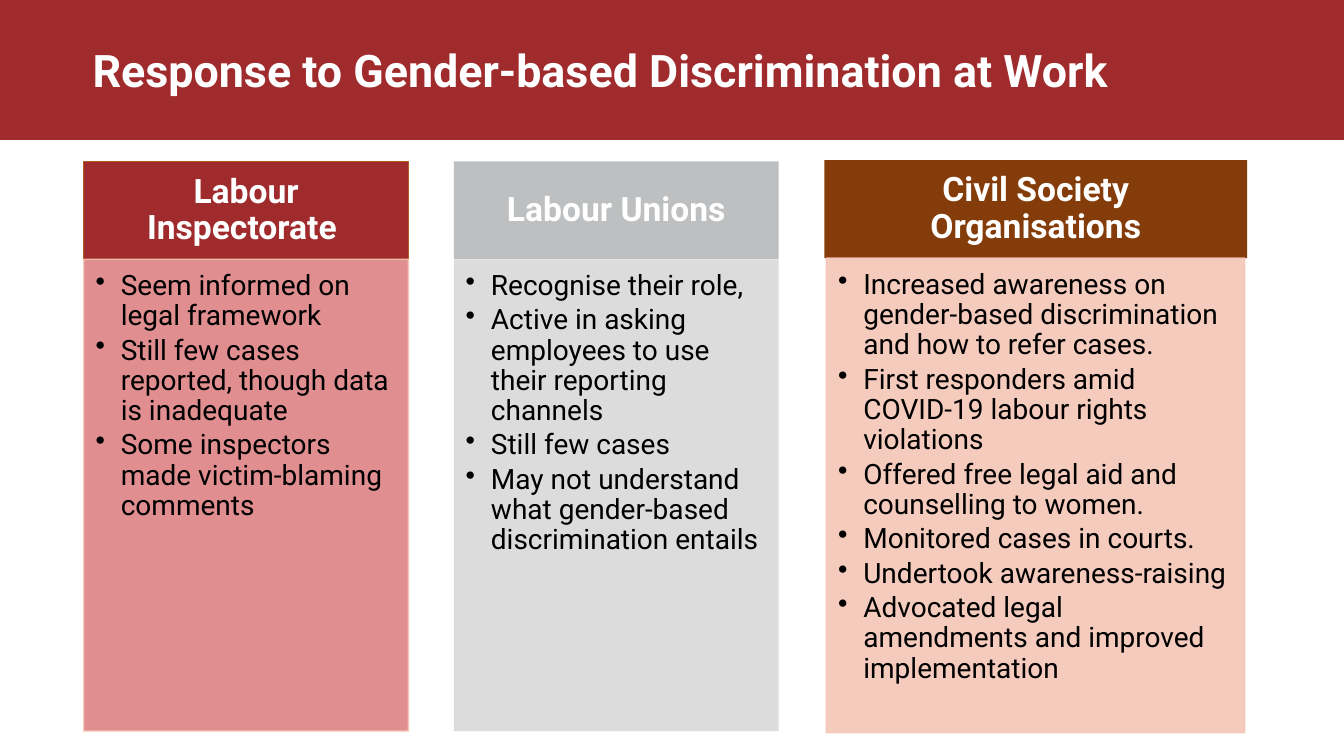
from dataclasses import dataclass

from lxml import etree
from pptx import Presentation
from pptx import util as u
from pptx.dml.color import RGBColor
from pptx.enum import shapes, text
from pptx.oxml import ns

FONT = "Roboto"
RED, WHITE, BLACK, PINK = "A02B2D", "FFFFFF", "000000", "F5C6B6"
HEADER_HEIGHT = 70
HEADER_INSETS = (13.5, 8, 13.5, 8)
BODY_INSETS = (8.5, 8.5, 11.5, 12)
BULLET_INDENT = 18


@dataclass
class Box:
    left: float
    top: float
    width: float
    height: float


@dataclass
class Panel:
    box: Box
    fill: str
    line: str | None = None
    alpha: int = 100


@dataclass
class Column:
    heading: str
    header: Panel
    body: Panel
    points: list[str]


COLUMNS = [
    Column(
        "Labour Inspectorate ",
        Panel(Box(59.8, 115.2, 232, HEADER_HEIGHT), RED, "AF5C24"),
        Panel(Box(59.8, 185.2, 232, 337), "DE8284", PINK, 90),
        ["Seem informed on legal framework",
         "Still few cases reported, though data is inadequate",
         "Some inspectors made victim-blaming comments"],
    ),
    Column(
        "Labour Unions",
        Panel(Box(324.2, 115.2, 232, HEADER_HEIGHT), "BDBFC1"),
        Panel(Box(324.2, 185.2, 232, 337), "D9D9D9", None, 90),
        ["Recognise their role,",
         "Active in asking employees to use their reporting channels",
         "Still few cases",
         "May not understand what gender-based discrimination entails"],
    ),
    Column(
        "Civil Society Organisations",
        Panel(Box(588.8, 114.4, 302, HEADER_HEIGHT), "843C0B"),
        Panel(Box(590.2, 184.4, 299, 339), PINK, PINK, 90),
        ["Increased awareness on gender-based discrimination and how to refer cases.",
         "First responders amid COVID-19 labour rights violations",
         "Offered free legal aid and counselling to women.",
         "Monitored cases in courts.",
         "Undertook awareness-raising",
         "Advocated legal amendments and improved implementation"],
    ),
]


def color(value: str) -> RGBColor:
    return RGBColor.from_string(value)


def place(box: Box) -> list[u.Length]:
    return [u.Pt(length) for length in (box.left, box.top, box.width, box.height)]


def paint(fill, value: str, alpha: int = 100) -> None:
    """Apply a solid fill, with opacity in percent."""
    fill.solid()
    fill.fore_color.rgb = color(value)
    if alpha < 100:
        for solid in fill._xPr.iterchildren(ns.qn("a:solidFill")):
            etree.SubElement(solid[0], ns.qn("a:alpha"), val=str(alpha * 1000))


def add_panel(slide, panel: Panel):
    shape = slide.shapes.add_shape(shapes.MSO_SHAPE.RECTANGLE, *place(panel.box))
    shape.shadow.inherit = False
    paint(shape.fill, panel.fill, panel.alpha)
    if panel.line:
        paint(shape.line.fill, panel.line, panel.alpha)
        shape.line.width = u.Pt(1)
    else:
        shape.line.fill.background()
    return shape


def write(shape, lines: list[str], size: float, value: str, insets: tuple,
          anchor=text.MSO_ANCHOR.MIDDLE, align=text.PP_ALIGN.LEFT,
          bold: bool = False, bullets: bool = False) -> None:
    frame = shape.text_frame
    frame.word_wrap = True
    frame.vertical_anchor = anchor
    (frame.margin_left, frame.margin_top,
     frame.margin_right, frame.margin_bottom) = map(u.Pt, insets)
    frame.text = "\n".join(lines)
    for paragraph in frame.paragraphs:
        paragraph.alignment = align
        paragraph.line_spacing = 0.9
        if bullets:
            paragraph.space_after = u.Pt(3)
            properties = paragraph._p.get_or_add_pPr()
            properties.set("marL", str(u.Pt(BULLET_INDENT)))
            properties.set("indent", str(-u.Pt(BULLET_INDENT)))
            etree.SubElement(properties, ns.qn("a:buChar"), char="•")
        font = paragraph.font
        font.name, font.size, font.bold = FONT, u.Pt(size), bold
        font.color.rgb = color(value)


def add_column(slide, column: Column) -> None:
    header = add_panel(slide, column.header)
    write(header, [column.heading], 24, WHITE, HEADER_INSETS,
          align=text.PP_ALIGN.CENTER, bold=True)
    body = add_panel(slide, column.body)
    write(body, column.points, 20, BLACK, BODY_INSETS,
          anchor=text.MSO_ANCHOR.TOP, bullets=True)


def main() -> None:
    presentation = Presentation()
    presentation.slide_width, presentation.slide_height = u.Pt(960), u.Pt(540)
    slide = presentation.slides.add_slide(presentation.slide_layouts[6])

    # Title band
    add_panel(slide, Panel(Box(0, 0, 960, 100), RED))
    title = slide.shapes.add_textbox(*place(Box(59, 10.8, 877, 82)))
    write(title, ["Response to Gender-based Discrimination at Work"], 32, WHITE,
          (7.2, 3.6, 7.2, 3.6), bold=True)

    # Three responders
    for column in COLUMNS:
        add_column(slide, column)

    presentation.save("out.pptx")


if __name__ == "__main__":
    main()
